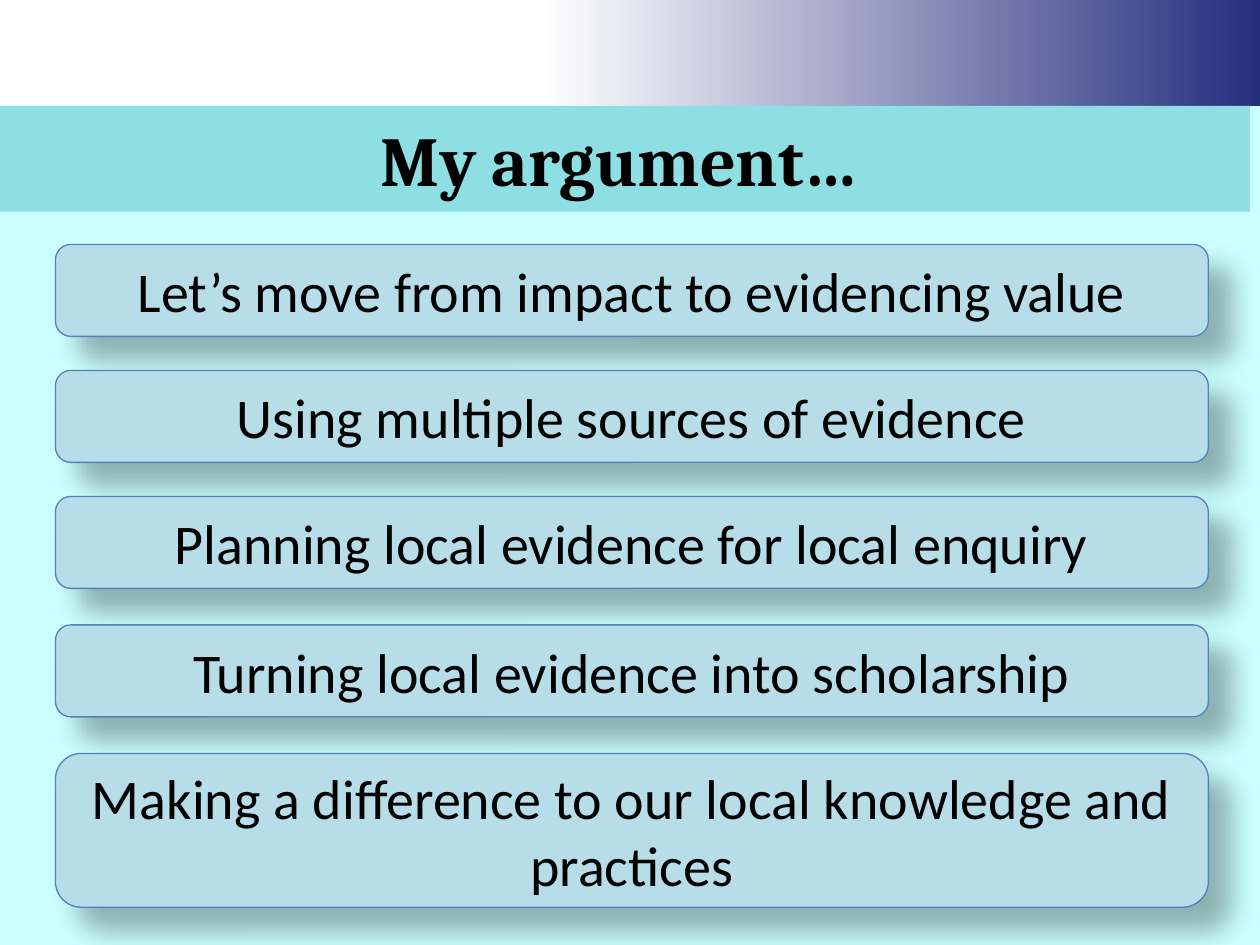
from lxml.etree import SubElement as Sub
from pptx import Presentation
from pptx.dml.color import RGBColor
from pptx.enum.shapes import MSO_SHAPE as Kind
from pptx.enum.text import MSO_ANCHOR as Anchor, PP_ALIGN as Align
from pptx.oxml.ns import qn
from pptx.util import Inches, Pt

CARDS = [
    (1.94, 0.73, "Let’s move from impact to evidencing value"),
    (2.94, 0.73, "Using multiple sources of evidence"),
    (3.94, 0.73, "Planning local evidence for local enquiry"),
    (4.96, 0.73, "Turning local evidence into scholarship"),
    (5.98, 1.22, "Making a difference to our local knowledge and practices"),
]


def paint(fmt, color):
    fmt.solid()
    fmt.fore_color.rgb = RGBColor.from_string(color)


def add_box(slide, kind, left, top, width, height):
    box = slide.shapes.add_shape(
        kind, Inches(left), Inches(top), Inches(width), Inches(height))
    box.shadow.inherit = False
    box.line.fill.background()
    return box


def write(box, text, size=32, font="Calibri", color="000000", bold=False):
    frame = box.text_frame
    frame.word_wrap = True
    frame.vertical_anchor = Anchor.MIDDLE
    para = frame.paragraphs[0]
    para.alignment = Align.CENTER
    run = para.add_run()
    run.text = text
    run.font.size = Pt(size)
    run.font.name = font
    run.font.bold = bold
    paint(run.font.fill, color)


def add_shade(box, color="000000", alpha=30, blur=15, dist=18, angle=45):
    effects = box.element.spPr.find(qn("a:effectLst"))
    shade = Sub(effects, qn("a:outerShdw"), blurRad=str(Pt(blur)),
                dist=str(Pt(dist)), dir=str(angle * 60000),
                algn="ctr", rotWithShape="0")
    tint = Sub(shade, qn("a:srgbClr"), val=color)
    Sub(tint, qn("a:alpha"), val=str(alpha * 1000))


def add_band(slide):
    fill = add_box(slide, Kind.RECTANGLE, 0, 0, 10, 0.84).fill
    fill.gradient()
    fill.gradient_angle = 180
    stops = [("262E7E", 0), ("FFFFFF", 0.57)]
    for stop, (color, place) in zip(fill.gradient_stops, stops):
        stop.color.rgb = RGBColor.from_string(color)
        stop.position = place


def add_title(slide, text):
    box = add_box(slide, Kind.RECTANGLE, -0.08, 0.84, 10, 0.84)
    paint(box.fill, "8DDFE3")
    write(box, text, size=40, font="Cambria", bold=True)


def add_card(slide, top, height, text):
    box = add_box(slide, Kind.ROUNDED_RECTANGLE, 0.44, top, 9.15, height)
    paint(box.fill, "B7DEE8")
    paint(box.line.fill, "4F81BD")
    box.line.width = Pt(0.75)
    add_shade(box)
    write(box, text)


def main():
    deck = Presentation()
    deck.slide_width, deck.slide_height = Inches(10), Inches(7.5)
    slide = deck.slides.add_slide(deck.slide_layouts[6])
    paint(slide.background.fill, "CCFFFF")
    add_band(slide)
    add_title(slide, "My argument…")
    for top, height, text in CARDS:
        add_card(slide, top, height, text)
    deck.save("out.pptx")


if __name__ == "__main__":
    main()
